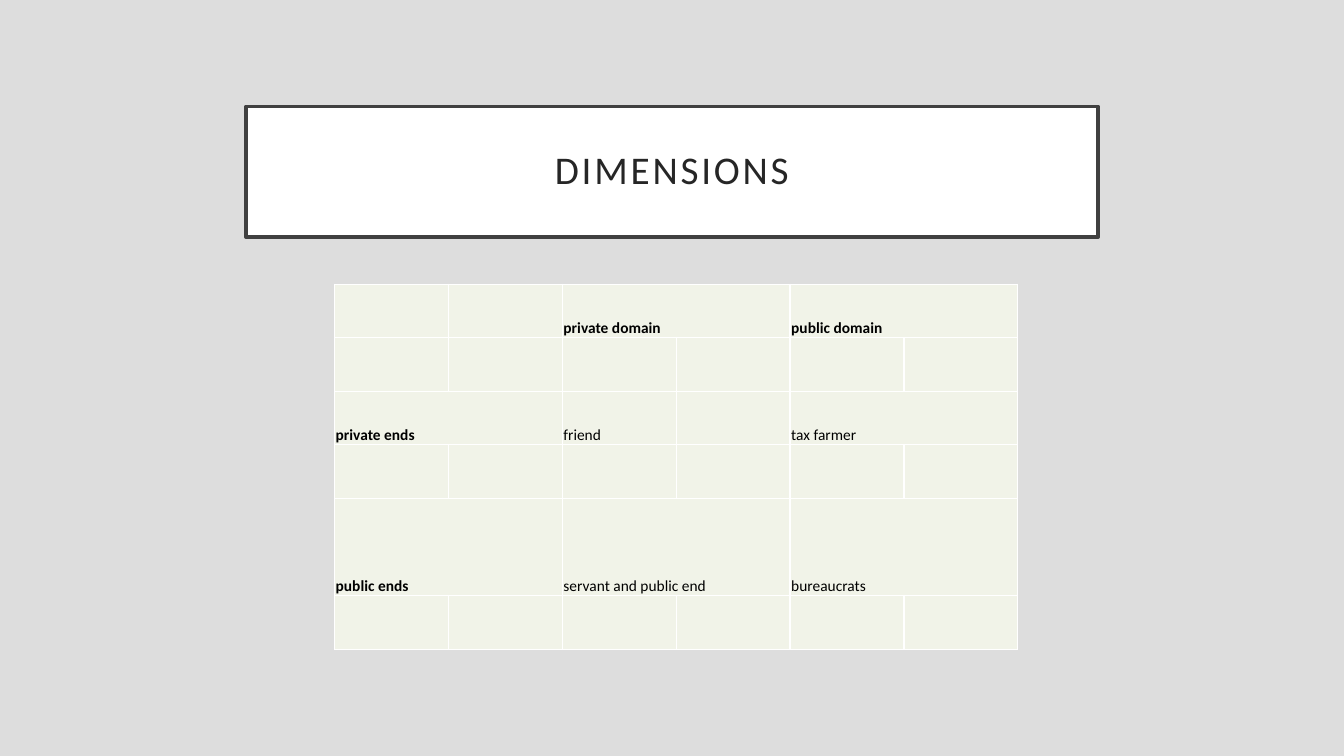
"""Build the Dimensions slide: a framed title above a table of domains and ends."""
from lxml import etree
from pptx import Presentation, util as u
from pptx.dml.color import RGBColor
from pptx.enum import shapes, text
from pptx.oxml.ns import qn

BACKGROUND = RGBColor(0xDD, 0xDD, 0xDD)
WHITE = RGBColor(0xFF, 0xFF, 0xFF)
FRAME = RGBColor(0x40, 0x40, 0x40)
TITLE = RGBColor(0x26, 0x26, 0x26)
CELL = RGBColor(0xF1, 0xF3, 0xE8)
BLACK = RGBColor(0, 0, 0)

COL_WIDTH = 2.87
ROW_HEIGHTS = [1.35, 1.35, 1.35, 1.35, 2.45, 1.35]
ENTRIES = [
    (0, 2, "private domain", 2, True),
    (0, 4, "public domain", 2, True),
    (2, 0, "private ends", 2, True),
    (2, 2, "friend", 1, False),
    (2, 4, "tax farmer", 2, False),
    (4, 0, "public ends", 2, True),
    (4, 2, "servant and public end", 2, False),
    (4, 4, "bureaucrats", 2, False),
]


def set_format(obj, values):
    for name, value in values.items():
        setattr(obj, name, value)


def add_borders(cell):
    tcPr = cell._tc.get_or_add_tcPr()
    for i, side in enumerate(("lnL", "lnR", "lnT", "lnB")):
        ln = etree.Element(qn(f"a:{side}"), w=str(u.Pt(1)))
        fill = etree.SubElement(ln, qn("a:solidFill"))
        etree.SubElement(fill, qn("a:srgbClr"), val=str(WHITE))
        tcPr.insert(i, ln)


prs = Presentation()
set_format(prs, {"slide_width": u.Cm(33.87), "slide_height": u.Cm(19.05)})
s = prs.slides.add_slide(prs.slide_layouts[6])
s.background.fill.solid()
s.background.fill.fore_color.rgb = BACKGROUND

sp = s.shapes.add_shape(shapes.MSO_SHAPE.RECTANGLE, u.Cm(6.2), u.Cm(2.68), u.Cm(21.47), u.Cm(3.3))
sp.shadow.inherit = False
sp.fill.solid()
sp.fill.fore_color.rgb = WHITE
sp.line.color.rgb = FRAME
sp.line.width = u.Pt(2.5)
tf = sp.text_frame
set_format(tf, {"word_wrap": True, "vertical_anchor": text.MSO_ANCHOR.MIDDLE})
for side in ("left", "right", "top", "bottom"):
    setattr(tf, f"margin_{side}", u.Cm(0.5))
p = tf.paragraphs[0]
set_format(p, {"alignment": text.PP_ALIGN.CENTER, "line_spacing": 0.9})
r = p.add_run()
r.text = "DIMENSIONS"
set_format(r.font, {"name": "Calibri", "size": u.Pt(28)})
r.font.color.rgb = TITLE
r.font._element.set("spc", "200")

gf = s.shapes.add_table(len(ROW_HEIGHTS), 6, u.Cm(8.43), u.Cm(7.16), u.Cm(6 * COL_WIDTH), u.Cm(sum(ROW_HEIGHTS)))
tbl = gf.table
set_format(tbl, {"first_row": False, "horz_banding": False})
for col in tbl.columns:
    col.width = u.Cm(COL_WIDTH)
for row, height in zip(tbl.rows, ROW_HEIGHTS):
    row.height = u.Cm(height)
for cell in tbl.iter_cells():
    cell.fill.solid()
    cell.fill.fore_color.rgb = CELL
    add_borders(cell)

for row, col, label, span, bold in ENTRIES:
    cell = tbl.cell(row, col)
    if span > 1:
        cell.merge(tbl.cell(row, col + span - 1))
    set_format(cell, {
        "vertical_anchor": text.MSO_ANCHOR.BOTTOM,
        "margin_left": u.Cm(0.03),
        "margin_right": u.Cm(0.03),
        "margin_top": u.Cm(0.03),
        "margin_bottom": 0,
    })
    r = cell.text_frame.paragraphs[0].add_run()
    r.text = label
    set_format(r.font, {"name": "Calibri", "size": u.Pt(11), "bold": bold})
    r.font.color.rgb = BLACK

prs.save("out.pptx")
